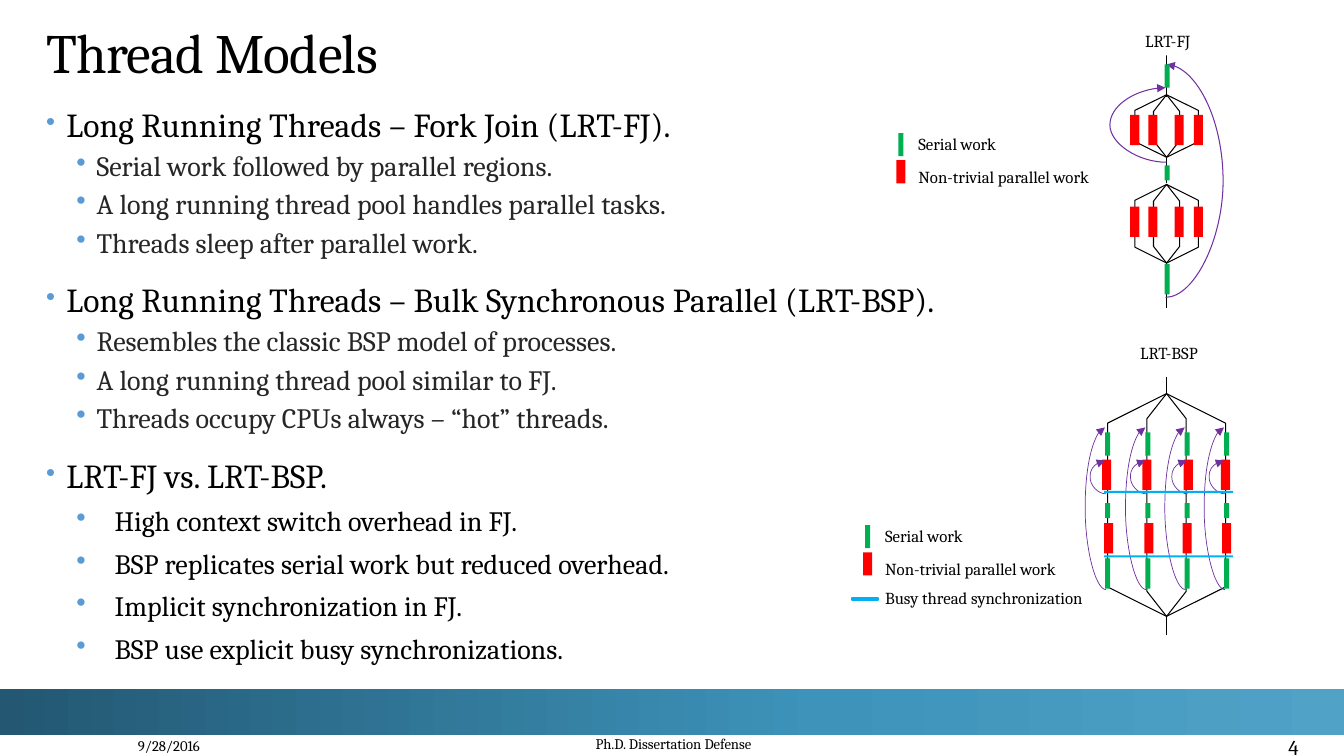
from copy import deepcopy

from pptx import Presentation
from pptx.dml.color import RGBColor
from pptx.enum import shapes, text
from pptx.oxml import ns, xmlchemy
from pptx.util import Inches, Pt

BLACK = RGBColor(0x00, 0x00, 0x00)
DARK_GRAY = RGBColor(0x26, 0x26, 0x26)
WHITE = RGBColor(0xFF, 0xFF, 0xFF)
BULLET_BLUE = "5B9BD5"
SERIAL_GREEN = RGBColor(0x00, 0xB0, 0x50)
PARALLEL_RED = RGBColor(0xFF, 0x00, 0x00)
SYNC_BLUE = RGBColor(0x00, 0xB0, 0xF0)
LOOP_PURPLE = RGBColor(0x70, 0x30, 0xA0)
BANNER_STOPS = [
    (0, RGBColor(0x23, 0x57, 0x72)),
    (0.61, RGBColor(0x3D, 0x93, 0xBA)),
    (1, RGBColor(0x51, 0xA2, 0xC7)),
]


def add_text(frame, words, size=12, color=BLACK, align=None, line=None, before=0,
             after=0, spacing=0, level=0, indent=None, hanging=0, bullet_size=100):
    """Write one paragraph; an indent also gives it a bullet."""
    first = not frame.paragraphs[0].runs
    paragraph = frame.paragraphs[0] if first else frame.add_paragraph()
    paragraph.alignment = align
    paragraph.line_spacing = line
    paragraph.level = level
    paragraph.space_before = Pt(0 if first else before)
    paragraph.space_after = Pt(after)
    if indent is not None:
        properties = paragraph._p.get_or_add_pPr()
        properties.set("marL", str(Inches(indent)))
        properties.set("indent", str(Inches(-hanging)))
        color_element = xmlchemy.OxmlElement("a:buClr")
        rgb_element = xmlchemy.OxmlElement("a:srgbClr")
        rgb_element.set("val", BULLET_BLUE)
        color_element.append(rgb_element)
        size_element = xmlchemy.OxmlElement("a:buSzPct")
        size_element.set("val", str(bullet_size * 1000))
        character = xmlchemy.OxmlElement("a:buChar")
        character.set("char", "•")
        properties.extend([color_element, size_element, character])
    run = paragraph.add_run()
    run.text = words
    run.font.name = "Cambria"
    run.font.size = Pt(size)
    run.font.color.rgb = color
    run.font._element.set("spc", str(round(spacing * 100)))


def add_block(parent, left, top, width, height, color):
    """Draw a plain filled rectangle."""
    block = parent.shapes.add_shape(shapes.MSO_SHAPE.RECTANGLE, Inches(left),
                                    Inches(top), Inches(width), Inches(height))
    block.shadow.inherit = False
    block.fill.solid()
    block.fill.fore_color.rgb = color
    block.line.fill.background()
    return block


presentation = Presentation()
presentation.slide_width = Inches(13.33)
presentation.slide_height = Inches(7.5)
slide = presentation.slides.add_slide(presentation.slide_layouts[6])

# Banner
banner = add_block(slide, 0, 6.84, 13.33, 0.45, WHITE)
banner.fill.gradient()
banner.fill.gradient_angle = 0
stop_list = banner.element.spPr.find(".//" + ns.qn("a:gsLst"))
stop_list.append(deepcopy(stop_list[-1]))
for stop, (position, color) in zip(banner.fill.gradient_stops, BANNER_STOPS):
    stop.position = position
    stop.color.rgb = color

# Bulleted sections
PLAIN = dict(indent=0.5, hanging=0.2, before=3, color=DARK_GRAY)
WIDE = dict(indent=0.68, hanging=0.38, before=6)
sections = [
    (1.01, "Long Running Threads – Fork Join (LRT-FJ).", PLAIN,
     ["Serial work followed by parallel regions.",
      "A long running thread pool handles parallel tasks.",
      "Threads sleep after parallel work."]),
    (2.75, "Long Running Threads – Bulk Synchronous Parallel (LRT-BSP).", PLAIN,
     ["Resembles the classic BSP model of processes.",
      "A long running thread pool similar to FJ.",
      "Threads occupy CPUs always – “hot” threads."]),
    (4.49, "LRT-FJ vs. LRT-BSP.", WIDE,
     ["High context switch overhead in FJ.",
      "BSP replicates serial work but reduced overhead.",
      "Implicit synchronization in FJ.",
      "BSP use explicit busy synchronizations."]),
]
for top, heading, style, points in sections:
    box = slide.shapes.add_textbox(Inches(0.36), Inches(top), Inches(12.57), Inches(5.46))
    box.text_frame.word_wrap = True
    add_text(box.text_frame, heading, size=24, line=0.95, after=2, spacing=0.1,
             indent=0.2, hanging=0.2, bullet_size=80)
    for point in points:
        add_text(box.text_frame, point, size=20, level=1, line=0.9, after=3, **style)

# Title and footer: place, anchor, insets, words, format
MIDDLE, BOTTOM = text.MSO_ANCHOR.MIDDLE, text.MSO_ANCHOR.BOTTOM
CENTER, RIGHT = text.PP_ALIGN.CENTER, text.PP_ALIGN.RIGHT
captions = [
    ((0.36, 0.15, 12.57, 0.75), BOTTOM, (0.1, 0.05, 0.1, 0.05), "Thread Models",
     dict(size=39.6, line=0.9, spacing=-0.5)),
    ((0, 7.2, 2.08, 0.4), MIDDLE, (0.1, 0.05, 0.1, 0.05), "9/28/2016",
     dict(size=10.5, align=RIGHT)),
    ((4.72, 7.13, 3.92, 0.4), MIDDLE, (0.1, 0.15, 0.1, 0.05),
     "Ph.D. Dissertation Defense", dict(size=10.5, align=CENTER)),
    ((12.33, 7.2, 1, 0.32), MIDDLE, (0.05, 0.1, 0.05, 0), "4",
     dict(size=15, align=CENTER)),
]
for place, anchor, insets, words, style in captions:
    frame = slide.shapes.add_textbox(*map(Inches, place)).text_frame
    frame.word_wrap = True
    frame.vertical_anchor = anchor
    (frame.margin_left, frame.margin_top,
     frame.margin_right, frame.margin_bottom) = map(Inches, insets)
    add_text(frame, words, **style)

# Diagram data
AXIS = 11.57
FJ_THREADS = [11.21, 11.39, 11.65, 11.84]
BSP_SERIAL = [10.96, 11.36, 11.75, 12.14]
BSP_UPPER = [10.93, 11.33, 11.74, 12.11]
BSP_LOWER = [10.95, 11.35, 11.73, 12.12]
diagrams = [
    dict(  # Fork join
        forks=[(1.25, 0.62, 0.63, 0.26), (2.22, 0.78, 0.63, 0.26)],
        stems=[(0.48, 0.96), (1.57, 1.82), (2.61, 3.06)],
        parallel=[(FJ_THREADS, 1.14), (FJ_THREADS, 2.05)],
        loops=[(11.57, 1.61, 11.56, 0.87, 0.57), (11.56, 2.95, 11.57, 0.64, 0.58)],
        loop_width=0.75,
        serial=[([11.55], 0.64, 0.23), ([11.55], 1.64, 0.15), ([11.55], 2.62, 0.3)],
        barriers=[]),
    dict(  # Bulk synchronous parallel
        forks=[(5.01, 2.21, 1.17, 0.39)],
        stems=[(3.74, 3.91), (6.12, 6.3)],
        parallel=[(BSP_UPPER, 4.56), (BSP_LOWER, 5.19)],
        loops=[(x + 0.04, 4.9, x + 0.03, 4.57, 0.16) for x in BSP_UPPER]
        + [(x + 0.01, 5.85, x, 4.24, 0.21) for x in BSP_SERIAL],
        loop_width=0.5,
        serial=[(BSP_SERIAL, 4.29, 0.23), (BSP_SERIAL, 4.99, 0.15),
                (BSP_SERIAL, 5.54, 0.3)],
        barriers=[4.87, 5.51]),
]

# Diagrams
for diagram in diagrams:
    group = slide.shapes.add_group_shape()
    for middle, length, outer, inner in diagram["forks"]:
        for breadth, slant in [(outer, 0.25), (inner, 0.637)]:
            fork = group.shapes.add_shape(
                shapes.MSO_SHAPE.HEXAGON, Inches(AXIS - length / 2),
                Inches(middle - breadth / 2), Inches(length), Inches(breadth))
            fork.rotation = 90
            fork.adjustments[0] = slant
            fork.shadow.inherit = False
            fork.fill.background()
            fork.line.color.rgb = BLACK
            fork.line.width = Pt(0.75)
    for columns, top in diagram["parallel"]:
        for left in columns:
            add_block(group, left, top, 0.09, 0.3, PARALLEL_RED)
    stems = [(AXIS, start, AXIS, end, 0) for start, end in diagram["stems"]]
    for x1, y1, x2, y2, reach in stems + diagram["loops"]:
        kind = shapes.MSO_CONNECTOR.CURVE if reach else shapes.MSO_CONNECTOR.STRAIGHT
        line = group.shapes.add_connector(kind, *map(Inches, (x1, y1, x2, y2)))
        line.line.color.rgb = LOOP_PURPLE if reach else BLACK
        line.line.width = Pt(diagram["loop_width"] if reach else 0.75)
        line.element.spPr.append(xmlchemy.OxmlElement("a:effectLst"))
        if reach:
            guide = xmlchemy.OxmlElement("a:gd")
            guide.set("name", "adj1")
            guide.set("fmla", f"val {round(reach / abs(x2 - x1) * 100000)}")
            line.element.spPr.find(".//" + ns.qn("a:avLst")).append(guide)
            arrowhead = xmlchemy.OxmlElement("a:tailEnd")
            arrowhead.set("type", "triangle")
            line.line._get_or_add_ln().append(arrowhead)
    for columns, top, height in diagram["serial"]:
        for left in columns:
            add_block(group, left, top, 0.05, height, SERIAL_GREEN)
    for top in diagram["barriers"]:
        add_block(group, 10.95, top, 1.28, 0.02, SYNC_BLUE)

# Diagram labels
for words, place in [("LRT-FJ", (11.26, 0.24, 1.72, 0.31)),
                     ("LRT-BSP", (11.21, 3.34, 1.21, 0.3))]:
    label = slide.shapes.add_textbox(*map(Inches, place))
    label.fill.solid()
    label.fill.fore_color.rgb = WHITE
    label.text_frame.word_wrap = False
    add_text(label.text_frame, words, line=1.07, after=8)

# Legends
for left, top, height, has_barrier in [(8.89, 1.32, 0.63, False), (8.56, 5.21, 0.92, True)]:
    legend = slide.shapes.add_group_shape()
    add_block(legend, left + 0.02, top, 0.05, 0.23, SERIAL_GREEN)
    add_block(legend, left, top + 0.27, 0.09, 0.23, PARALLEL_RED)
    box = legend.shapes.add_textbox(Inches(left + 0.12), Inches(top - 0.04),
                                    Inches(3.15), Inches(height))
    box.text_frame.word_wrap = True
    add_text(box.text_frame, "Serial work")
    add_text(box.text_frame, "Non-trivial parallel work", before=9)
    if has_barrier:
        add_text(box.text_frame, "Busy thread synchronization", before=6)
        barrier = add_block(legend, left - 0.11, top + 0.72, 0.26, 0.02, SYNC_BLUE)
        barrier.line.color.rgb = SYNC_BLUE
        barrier.line.width = Pt(1.5)

presentation.save("out.pptx")
